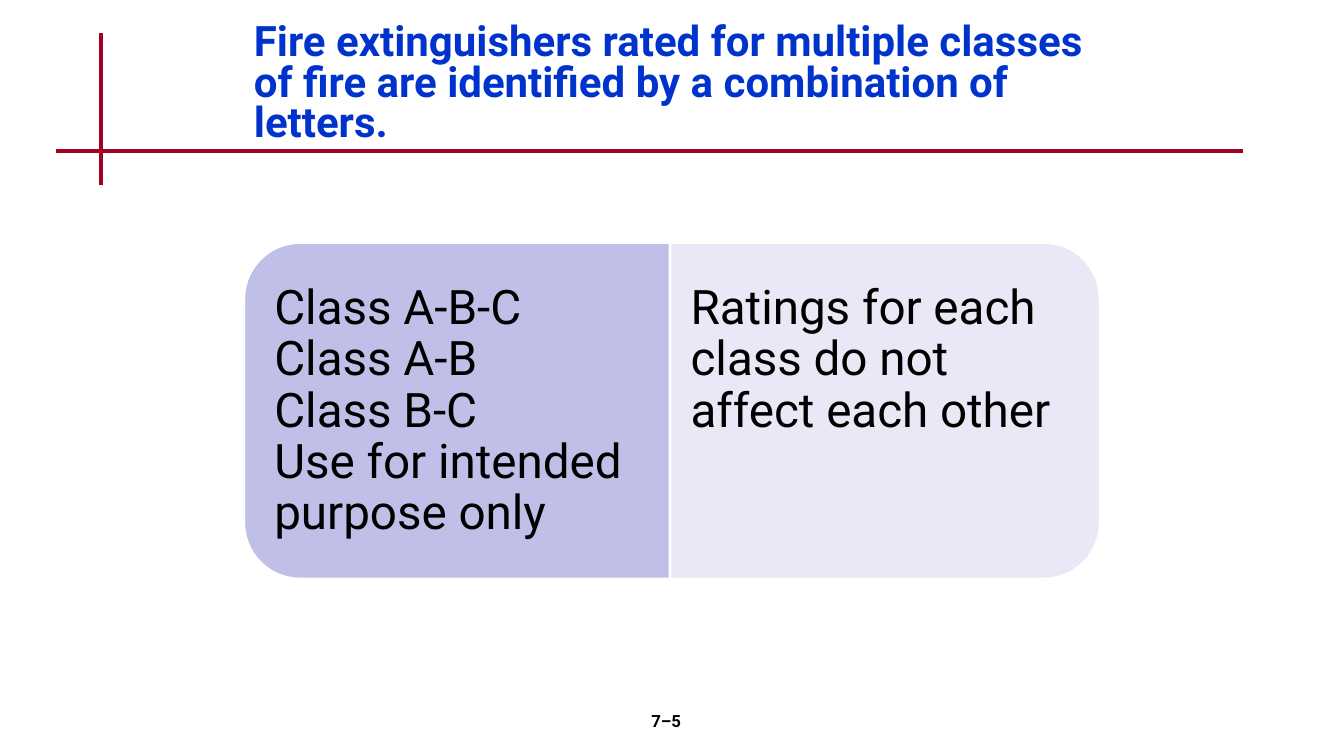
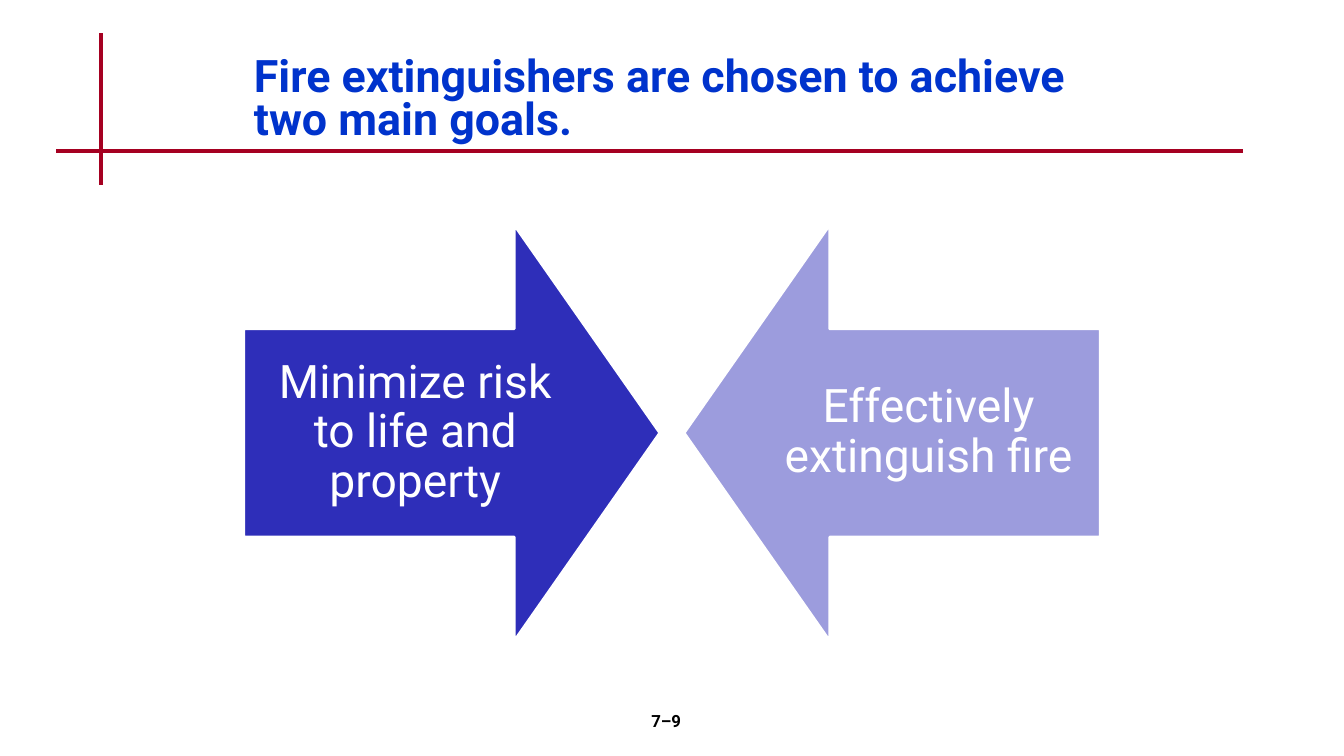
from dataclasses import dataclass

from lxml import etree
from pptx import Presentation
from pptx.dml.color import RGBColor
from pptx.enum.shapes import MSO_CONNECTOR, MSO_SHAPE
from pptx.enum.text import MSO_ANCHOR, PP_ALIGN
from pptx.oxml.ns import qn
from pptx.shapes.autoshape import Shape
from pptx.slide import Slide
from pptx.util import Cm, Pt

STRAIGHT = MSO_CONNECTOR.STRAIGHT
ROUNDED_PANEL = MSO_SHAPE.ROUND_2_SAME_RECTANGLE
RIGHT_ARROW, LEFT_ARROW = MSO_SHAPE.RIGHT_ARROW, MSO_SHAPE.LEFT_ARROW
TOP, MIDDLE = MSO_ANCHOR.TOP, MSO_ANCHOR.MIDDLE
LEFT, CENTER = PP_ALIGN.LEFT, PP_ALIGN.CENTER

FONT = "Roboto"
COLORS = {
    "rule": "A50021",
    "title": "0033CC",
    "black": "000000",
    "white": "FFFFFF",
    "panel_left": "BFBFE7",
    "panel_right": "E8E8F6",
    "arrow_left": "2E2EB9",
    "arrow_right": "9C9CDD",
}

SLIDE_WIDTH, SLIDE_HEIGHT = 33.87, 19.05
MIDLINE = SLIDE_WIDTH / 2
TITLE_LEFT, TITLE_WIDTH, TITLE_BOTTOM = 6.15, 21.55, 3.81
RULES = ((2.54, 0.84, 2.54, 4.65), (1.42, 3.81, 31.32, 3.81))

PANEL_WIDTH, PANEL_HEIGHT, PANEL_MIDDLE = 10.84, 8.48, 10.35
PANEL_OFFSET, PANEL_TEXT_OFFSET = 5.37, 5.16
PANEL_TEXT_WIDTH, PANEL_TEXT_HEIGHT = 10.44, 7.65
ARROW_SIZE, ARROW_MIDDLE, ARROW_OFFSET = 10.49, 10.91, 5.55


@dataclass(frozen=True)
class TextStyle:
    size: float
    color: str
    bold: bool = False
    align: PP_ALIGN = LEFT
    anchor: MSO_ANCHOR = TOP
    line_spacing: float = 1.0
    insets: tuple[float, float, float, float] = (0.25, 0.13, 0.25, 0.13)


@dataclass(frozen=True)
class Panel:
    side: int
    color: str
    lines: tuple[str, ...]
    insets: tuple[float, float, float, float]


@dataclass(frozen=True)
class Arrow:
    side: int
    preset: MSO_SHAPE
    color: str
    label: str


PANELS = (
    Panel(-1, "panel_left",
          ("Class A-B-C", "Class A-B", "Class B-C", "Use for intended purpose only"),
          (0.36, 0.61, 0.53, 0.61)),
    Panel(1, "panel_right",
          ("Ratings for each class do not affect each other",),
          (0.53, 0.61, 0.36, 0.61)),
)
ARROWS = (
    Arrow(-1, RIGHT_ARROW, "arrow_left", "Minimize risk to life and property"),
    Arrow(1, LEFT_ARROW, "arrow_right", "Effectively extinguish fire"),
)
ARROW_STYLE = TextStyle(33, "white", align=CENTER, anchor=MIDDLE,
                        line_spacing=0.9, insets=(0.65, 0.65, 0.65, 0.65))
NUMBER_STYLE = TextStyle(12, "black", bold=True, align=CENTER)


def rgb(name: str) -> RGBColor:
    return RGBColor.from_string(COLORS[name])


def write_text(box: Shape, lines: tuple[str, ...], style: TextStyle) -> None:
    frame = box.text_frame
    frame.word_wrap = True
    frame.vertical_anchor = style.anchor
    (frame.margin_left, frame.margin_top,
     frame.margin_right, frame.margin_bottom) = map(Cm, style.insets)
    para = frame.paragraphs[0]
    para.alignment = style.align
    para.line_spacing = style.line_spacing
    for index, line in enumerate(lines):
        if index:
            para.add_line_break()
        span = para.add_run()
        span.text = line
        span.font.name = FONT
        span.font.size = Pt(style.size)
        span.font.bold = style.bold
        span.font.color.rgb = rgb(style.color)


def add_text(page: Slide, left: float, top: float, width: float, height: float,
             lines: tuple[str, ...], style: TextStyle) -> None:
    box = page.shapes.add_textbox(Cm(left), Cm(top), Cm(width), Cm(height))
    write_text(box, lines, style)


def add_centered_shape(page: Slide, preset: MSO_SHAPE, center: float, middle: float,
                       width: float, height: float, color: str) -> Shape:
    shape = page.shapes.add_shape(preset, Cm(center - width / 2), Cm(middle - height / 2),
                                  Cm(width), Cm(height))
    shape.shadow.inherit = False
    shape.fill.solid()
    shape.fill.fore_color.rgb = rgb(color)
    shape.line.color.rgb = rgb("white")
    shape.line.width = Pt(2)
    return shape


def add_page(deck: Presentation, title: str, title_size: float, title_top: float,
             number: str) -> Slide:
    page = deck.slides.add_slide(deck.slide_layouts[6])
    for ends in RULES:
        rule = page.shapes.add_connector(STRAIGHT, *map(Cm, ends))
        rule.line.color.rgb = rgb("rule")
        rule.line.width = Pt(3)
        etree.SubElement(rule._element.spPr, qn("a:effectLst"))
    title_style = TextStyle(title_size, "title", bold=True, anchor=MIDDLE, line_spacing=0.8)
    add_text(page, TITLE_LEFT, title_top, TITLE_WIDTH, TITLE_BOTTOM - title_top,
             (title,), title_style)
    add_text(page, 13.26, 17.78, 7.06, 1.27, (number,), NUMBER_STYLE)
    return page


def add_panel(page: Slide, panel: Panel) -> None:
    shape = add_centered_shape(page, ROUNDED_PANEL, MIDLINE + panel.side * PANEL_OFFSET,
                               PANEL_MIDDLE, PANEL_HEIGHT, PANEL_WIDTH, panel.color)
    shape.rotation = panel.side * 90 % 360
    shape.adjustments[0] = 0.167
    shape.adjustments[1] = 0
    center = MIDLINE + panel.side * PANEL_TEXT_OFFSET
    add_text(page, center - PANEL_TEXT_WIDTH / 2, PANEL_MIDDLE - PANEL_TEXT_HEIGHT / 2,
             PANEL_TEXT_WIDTH, PANEL_TEXT_HEIGHT, panel.lines,
             TextStyle(34, "black", line_spacing=0.9, insets=panel.insets))


def add_arrow(page: Slide, arrow: Arrow) -> None:
    shape = add_centered_shape(page, arrow.preset, MIDLINE + arrow.side * ARROW_OFFSET,
                               ARROW_MIDDLE, ARROW_SIZE, ARROW_SIZE, arrow.color)
    shape.adjustments[0] = 0.5
    shape.adjustments[1] = 0.35
    write_text(shape, (arrow.label,), ARROW_STYLE)


def main() -> None:
    deck = Presentation()
    deck.slide_width, deck.slide_height = Cm(SLIDE_WIDTH), Cm(SLIDE_HEIGHT)
    ratings = add_page(
        deck,
        "Fire extinguishers rated for multiple classes of fire are identified "
        "by a combination of letters.",
        30, 0.48, "7–5")
    for panel in PANELS:
        add_panel(ratings, panel)
    goals = add_page(
        deck, "Fire extinguishers are chosen to achieve two main goals.", 32, 1.27, "7–9")
    for arrow in ARROWS:
        add_arrow(goals, arrow)
    deck.save("out.pptx")


if __name__ == "__main__":
    main()
